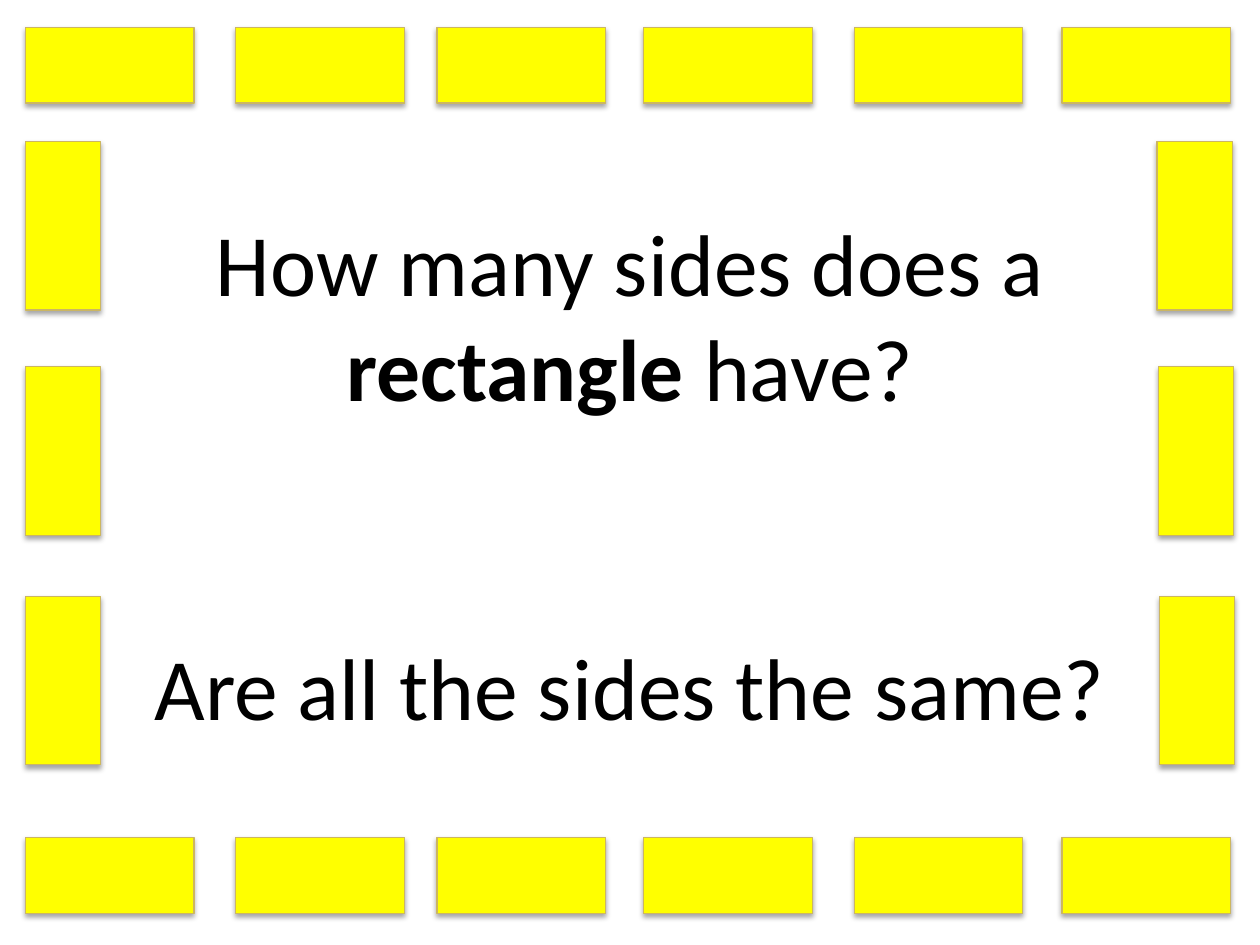
from dataclasses import dataclass

from lxml.etree import SubElement
from pptx import Presentation
from pptx.dml.color import RGBColor
from pptx.enum.shapes import MSO_SHAPE
from pptx.enum.text import MSO_ANCHOR, PP_ALIGN
from pptx.oxml.ns import qn
from pptx.util import Cm, Pt


@dataclass(frozen=True)
class Theme:
    fill: RGBColor = RGBColor(0xFF, 0xFF, 0x00)
    line: RGBColor = RGBColor(0xCC, 0xB6, 0x61)
    ink: RGBColor = RGBColor(0, 0, 0)
    shade: str = "000000"
    font: str = "Calibri"
    size: int = 50
    gap: int = 122


THEME = Theme()
LONG, SHORT = 3.4, 1.52
# Offsets of the bricks within the border, in centimetres
COLS = (0, 4.24, 8.3, 12.47, 16.71, 20.9)
ROWS = (3.99, 8.53, 13.16)
RIGHT = (23.57, 23.6, 23.62)


def add_shade(shape):
    """Give the shape a soft shadow straight below it."""
    shape.shadow.inherit = False
    effects = shape._element.spPr.find(qn("a:effectLst"))
    outer = SubElement(effects, qn("a:outerShdw"), blurRad=str(Pt(3.1)),
                       dist=str(Pt(1.8)), dir="5400000", rotWithShape="0")
    color = SubElement(outer, qn("a:srgbClr"), val=THEME.shade)
    SubElement(color, qn("a:alpha"), val="35000")


def add_brick(slide, x, y, turn=0):
    """Place a brick centred on x, y."""
    brick = slide.shapes.add_shape(
        MSO_SHAPE.RECTANGLE, Cm(x - LONG / 2), Cm(y - SHORT / 2),
        Cm(LONG), Cm(SHORT))
    brick.rotation = turn
    brick.fill.solid()
    brick.fill.fore_color.rgb = THEME.fill
    brick.line.color.rgb = THEME.line
    brick.line.width = Pt(0.75)
    add_shade(brick)


def add_border(slide, left, top, height):
    for y in (top + SHORT / 2, top + height - SHORT / 2):
        for col in COLS:
            add_brick(slide, left + col + LONG / 2, y)
    for side in ((SHORT / 2,) * len(ROWS), RIGHT):
        for x, y in zip(side, ROWS):
            add_brick(slide, left + x, top + y, 90)


def add_quiz(slide, left, top, width, height, lines):
    """Write each line, a list of (text, bold) runs, as a paragraph."""
    box = slide.shapes.add_textbox(Cm(left), Cm(top), Cm(width), Cm(height))
    frame = box.text_frame
    frame.word_wrap = True
    frame.vertical_anchor = MSO_ANCHOR.MIDDLE
    for i, runs in enumerate(lines):
        para = frame.add_paragraph() if i else frame.paragraphs[0]
        para.alignment = PP_ALIGN.CENTER
        para.space_before = Pt(THEME.gap if i else 0)
        for text, bold in runs:
            run = para.add_run()
            run.text = text
            run.font.name = THEME.font
            run.font.size = Pt(THEME.size)
            run.font.bold = bold
            run.font.color.rgb = THEME.ink


def main():
    deck = Presentation()
    deck.slide_width, deck.slide_height = Cm(25.4), Cm(19.05)
    slide = deck.slides.add_slide(deck.slide_layouts[6])
    add_quiz(slide, 1.27, 3.48, 22.86, 12.14, [
        [("How many sides does a ", False), ("rectangle", True),
         (" have?", False)],
        [("Are all the sides the same?", False)],
    ])
    add_border(slide, 0.51, 0.56, 17.85)
    deck.save("out.pptx")


if __name__ == "__main__":
    main()
